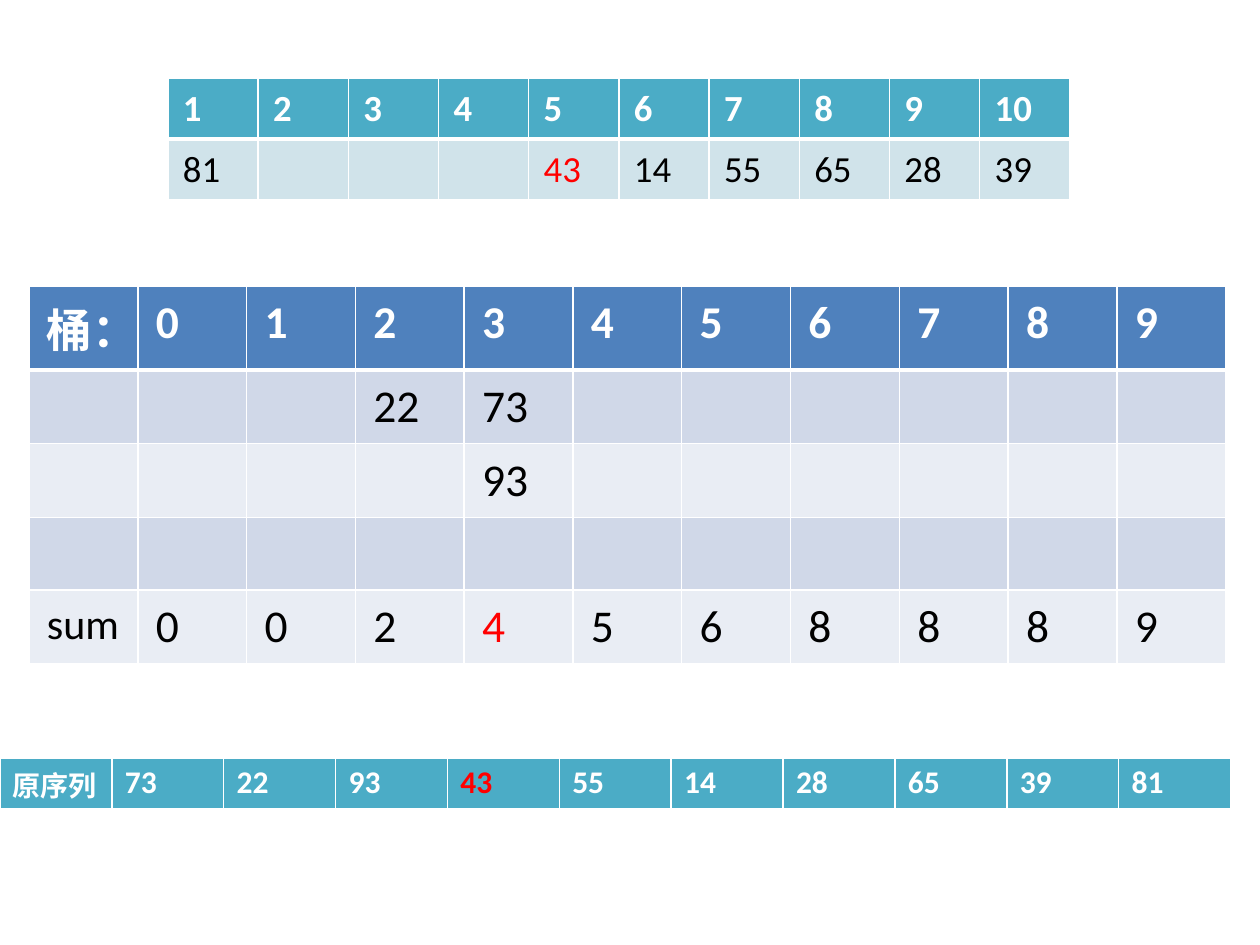
from dataclasses import dataclass

from lxml import etree
from pptx import Presentation
from pptx.dml.color import RGBColor
from pptx.oxml.ns import qn
from pptx.util import Pt

PX = 914400 / 126
PAGE_SIZE = (1260, 945)


@dataclass(frozen=True)
class Theme:
    font: str = "Calibri"
    white: str = "FFFFFF"
    black: str = "000000"
    highlight: str = "FF0000"
    teal: str = "4BACC6"
    teal_light: str = "D0E3EA"
    blue: str = "4F81BD"
    blue_bands: tuple = ("D0D8E8", "E9EDF4")
    bucket_size: int = 26
    sum_size: int = 24
    sorted_size: int = 21
    sequence_size: int = 18
    sequence_label_size: int = 16
    thin_line: int = 1
    header_line: int = 3


THEME = Theme()


def px(length):
    return round(length * PX)


def set_borders(cell, is_header):
    """Draw the white rules; only a header has its own top edge."""
    bottom = THEME.header_line if is_header else THEME.thin_line
    edges = [("a:lnL", THEME.thin_line), ("a:lnR", THEME.thin_line), ("a:lnB", bottom)]
    if is_header:
        edges.insert(2, ("a:lnT", THEME.thin_line))
    properties = cell._tc.get_or_add_tcPr()
    for position, (tag, width) in enumerate(edges):
        line = etree.Element(qn(tag), w=str(Pt(width)))
        fill = etree.SubElement(line, qn("a:solidFill"))
        etree.SubElement(fill, qn("a:srgbClr"), val=THEME.white)
        properties.insert(position, line)


def write_cell(cell, text, size, color, bold):
    span = cell.text_frame.paragraphs[0].add_run()
    span.text = text
    span.font.name = THEME.font
    span.font.size = Pt(size)
    span.font.bold = bold
    span.font.color.rgb = RGBColor.from_string(color)


def add_grid(page, box, rows, fills, size, inset, highlight, special_sizes=None):
    """Add a table with a bold first row; highlight and special_sizes use (row, column)."""
    left, top, width, height = box
    columns = len(rows[0])
    table = page.shapes.add_table(
        len(rows), columns, px(left), px(top), px(width), px(height)).table
    table.horz_banding = False
    for column in table.columns:
        column.width = px(width / columns)
    for row_index, values in enumerate(rows):
        table.rows[row_index].height = px(height / len(rows))
        is_header = row_index == 0
        for column_index, text in enumerate(values):
            place = (row_index, column_index)
            cell = table.cell(*place)
            cell.margin_left = cell.margin_right = px(inset[0])
            cell.margin_top = cell.margin_bottom = px(inset[1])
            cell.fill.solid()
            cell.fill.fore_color.rgb = RGBColor.from_string(fills[row_index])
            set_borders(cell, is_header)
            if text:
                color = THEME.white if is_header else THEME.black
                if place == highlight:
                    color = THEME.highlight
                text_size = (special_sizes or {}).get(place, size)
                write_cell(cell, text, text_size, color, is_header)


def add_bucket_table(page, box):
    blank = [""] * 11
    rows = [
        ["桶：", *"0123456789"],
        ["", "", "", "22", "73"] + blank[5:],
        ["", "", "", "", "93"] + blank[5:],
        blank,
        ["sum", *"0024568889"],
    ]
    add_grid(page, box, rows, (THEME.blue, *THEME.blue_bands * 2), THEME.bucket_size,
             (18, 9), (4, 4), {(4, 0): THEME.sum_size})


def add_sorted_table(page, box):
    rows = [
        [str(number) for number in range(1, 11)],
        ["81", "", "", "", "43", "14", "55", "65", "28", "39"],
    ]
    add_grid(page, box, rows, (THEME.teal, THEME.teal_light), THEME.sorted_size,
             (15, 8), (1, 4))


def add_sequence_table(page, box):
    rows = [["原序列", "73", "22", "93", "43", "55", "14", "28", "65", "39", "81"]]
    add_grid(page, box, rows, (THEME.teal,), THEME.sequence_size,
             (13, 6), (0, 4), {(0, 0): THEME.sequence_label_size})


def main():
    deck = Presentation()
    deck.slide_width, deck.slide_height = map(px, PAGE_SIZE)
    page = deck.slides.add_slide(deck.slide_layouts[6])
    add_bucket_table(page, (29, 286, 1197, 365))
    add_sorted_table(page, (168, 78, 902, 122))
    add_sequence_table(page, (0, 758, 1231, 52))
    deck.save("out.pptx")


if __name__ == "__main__":
    main()
